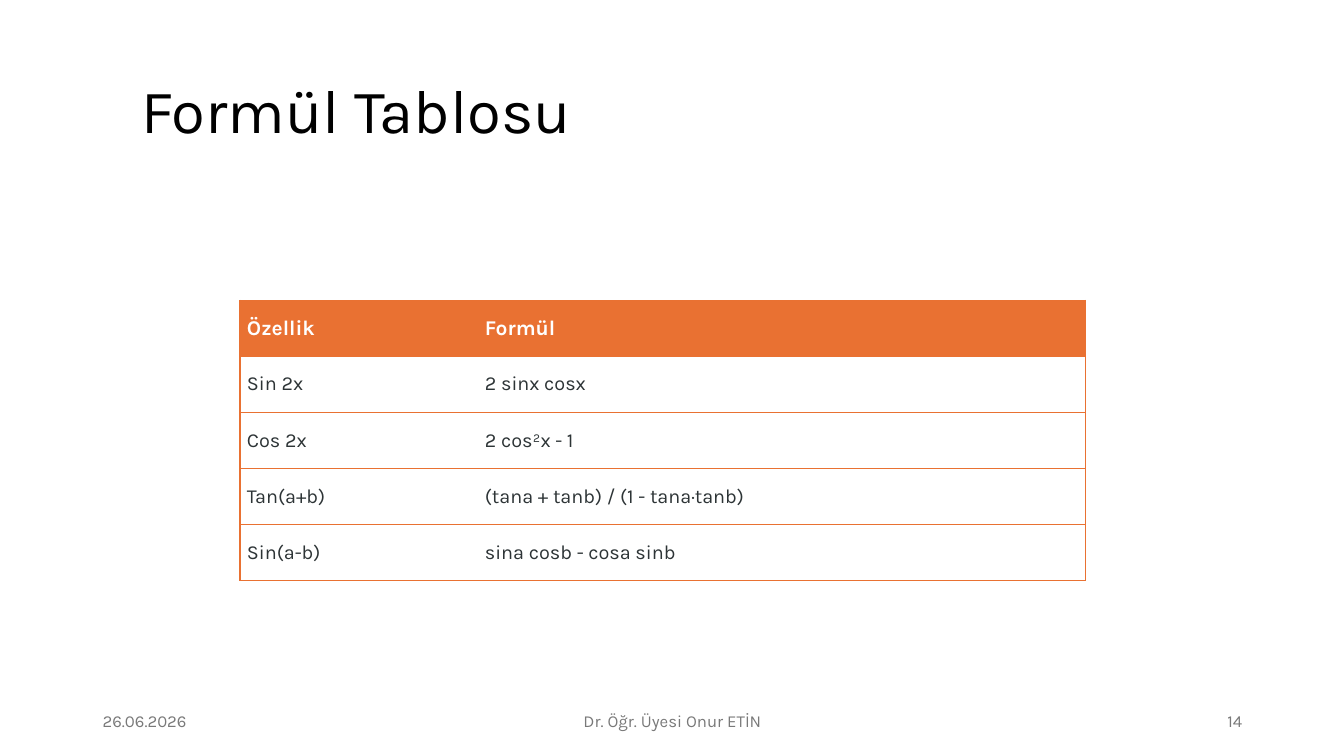
"""Build the formula table slide."""
from dataclasses import dataclass
from lxml.etree import SubElement
from pptx import Presentation
from pptx.dml.color import RGBColor
from pptx.enum.text import MSO_ANCHOR, PP_ALIGN
from pptx.oxml.ns import qn
from pptx.util import Inches, Pt


@dataclass(frozen=True)
class Theme:
    font: str = "Karla"
    ink: str = "000000"
    body: str = "2D3436"
    muted: str = "797979"
    accent: str = "E97132"
    paper: str = "FFFFFF"
    title: float = 44
    head: float = 15
    cell: float = 14.2
    foot: float = 12
    line: float = 1


THEME = Theme()
TITLE = "Formül Tablosu"
ROWS = [
    ("Özellik", "Formül"),
    ("Sin 2x", "2 sinx cosx"),
    ("Cos 2x", "2 cos²x - 1"),
    ("Tan(a+b)", "(tana + tanb) / (1 - tana·tanb)"),
    ("Sin(a-b)", "sina cosb - cosa sinb"),
]
FOOT = [
    ("26.06.2026", 0.92, 3, PP_ALIGN.LEFT),
    ("Dr. Öğr. Üyesi Onur ETİN", 4.42, 4.5, PP_ALIGN.CENTER),
    ("14", 9.42, 3, PP_ALIGN.RIGHT),
]
COLS = (2.36, 6.03)
HIGH = 2.78


def write(frame, text, *, size, color, bold=False, align=PP_ALIGN.LEFT, gap=None):
    """Put formatted text in a frame."""
    frame.word_wrap = True
    para = frame.paragraphs[0]
    para.alignment = align
    para.line_spacing = gap
    run = para.add_run()
    run.text = text
    run.font.name = THEME.font
    run.font.size = Pt(size)
    run.font.bold = bold
    run.font.color.rgb = RGBColor.from_string(color)


def edge(cell, side, shown):
    """Draw or clear one side of a cell."""
    line = SubElement(cell._tc.get_or_add_tcPr(), qn(f"a:ln{side}"), w=str(Pt(THEME.line)))
    if shown:
        fill = SubElement(line, qn("a:solidFill"))
        SubElement(fill, qn("a:srgbClr"), val=THEME.accent)
    else:
        SubElement(line, qn("a:noFill"))


def grid(slide):
    """Add the formula table."""
    frame = slide.shapes.add_table(
        len(ROWS), len(COLS), Inches(2.38), Inches(2.98), Inches(sum(COLS)), Inches(HIGH))
    table = frame.table
    table.horz_banding = False
    for col, wide in zip(table.columns, COLS):
        col.width = Inches(wide)
    for r, row in enumerate(ROWS):
        table.rows[r].height = Inches(HIGH / len(ROWS))
        head = r == 0
        for c, text in enumerate(row):
            cell = table.cell(r, c)
            cell.margin_left = cell.margin_right = Inches(0.07)
            cell.margin_top = cell.margin_bottom = Inches(0.03)
            cell.vertical_anchor = MSO_ANCHOR.MIDDLE
            write(cell.text_frame, text, bold=head,
                  size=THEME.head if head else THEME.cell,
                  color=THEME.paper if head else THEME.body)
            for side in "LRTB":
                inner = side == ("R" if c == 0 else "L")
                edge(cell, side, not inner)
            if head:
                cell.fill.solid()
                cell.fill.fore_color.rgb = RGBColor.from_string(THEME.accent)
            else:
                cell.fill.background()


def main():
    """Build and save the slide."""
    deck = Presentation()
    deck.slide_width, deck.slide_height = Inches(13.33), Inches(7.5)
    slide = deck.slides.add_slide(deck.slide_layouts[5])
    title = slide.shapes.title
    title.left, title.top = Inches(1.3), Inches(0.4)
    title.width, title.height = Inches(11.12), Inches(1.45)
    title.text_frame.vertical_anchor = MSO_ANCHOR.MIDDLE
    write(title.text_frame, TITLE, size=THEME.title, color=THEME.ink, gap=0.9)
    for text, left, wide, align in FOOT:
        box = slide.shapes.add_textbox(Inches(left), Inches(6.95), Inches(wide), Inches(0.4))
        box.text_frame.vertical_anchor = MSO_ANCHOR.MIDDLE
        write(box.text_frame, text, size=THEME.foot, color=THEME.muted, align=align)
    grid(slide)
    deck.save("out.pptx")


if __name__ == "__main__":
    main()
